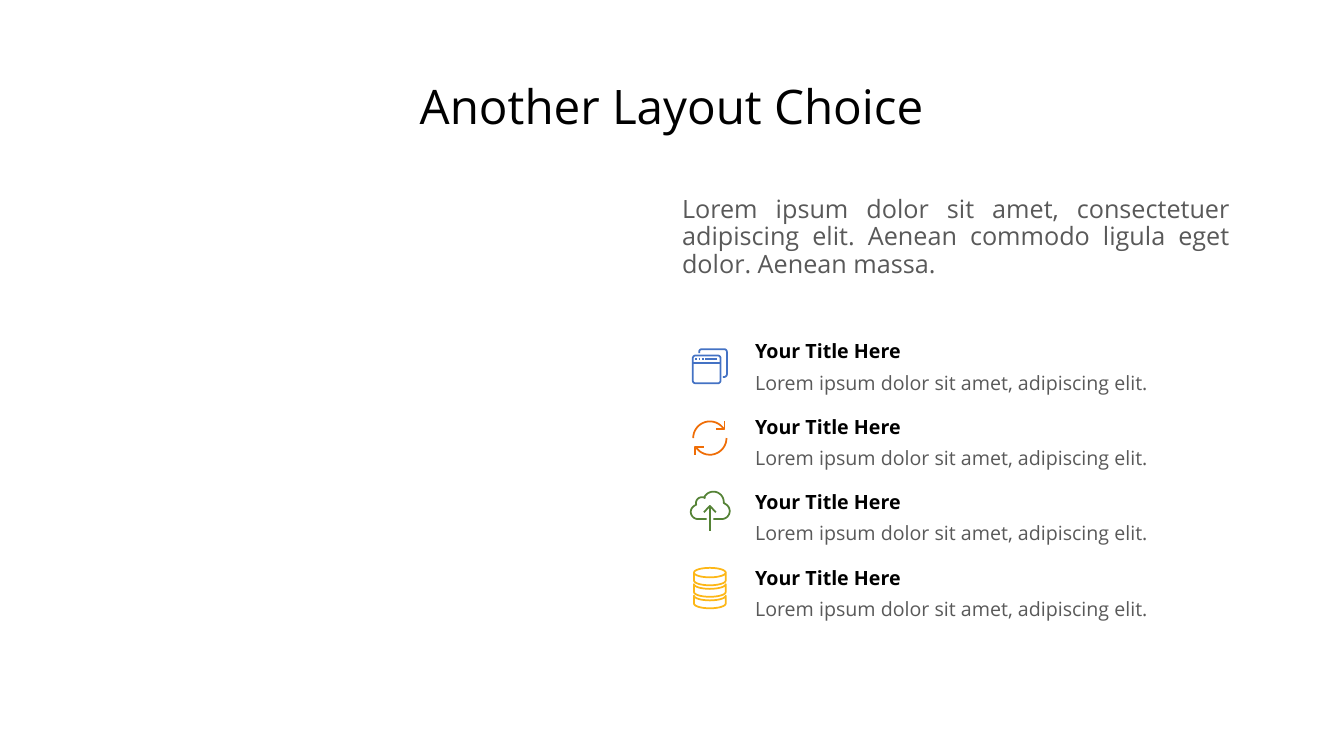
from math import cos, radians, sin

from pptx import Presentation
from pptx.dml.color import RGBColor
from pptx.enum.text import MSO_ANCHOR as Anchor, PP_ALIGN as Align
from pptx.util import Cm, Pt

BLACK = RGBColor(0x00, 0x00, 0x00)
GRAY = RGBColor(0x59, 0x59, 0x59)
BLUE = RGBColor(0x44, 0x72, 0xC4)
ORANGE = RGBColor(0xEF, 0x6D, 0x06)
GREEN = RGBColor(0x54, 0x82, 0x35)
YELLOW = RGBColor(0xFD, 0xB7, 0x17)


def write(frame, text, size=14, color=GRAY, bold=False, font="Open Sans",
          align=Align.LEFT, line_spacing=None, space_before=None):
    paragraph = frame.paragraphs[0]
    paragraph.alignment = align
    if line_spacing:
        paragraph.line_spacing = line_spacing
    if space_before:
        paragraph.space_before = Pt(space_before)
    run = paragraph.add_run()
    run.text = text
    run.font.name = font
    run.font.size = Pt(size)
    run.font.bold = bold
    run.font.color.rgb = color


def arc(cx, cy, rx, ry, start, end, steps=16):
    angles = [radians(start + (end - start) * i / steps) for i in range(steps + 1)]
    return [(cx + rx * cos(a), cy + ry * sin(a)) for a in angles]


def circle_arc(cx, cy, radius, start, end):
    return arc(cx, cy, radius, radius, start, end)


def window_icon():
    left, top, right, bottom, r = -0.43, -0.27, 0.27, 0.43, 0.07
    front = (circle_arc(left + r, top + r, r, 180, 270)
             + circle_arc(right - r, top + r, r, 270, 360)
             + circle_arc(right - r, bottom - r, r, 0, 90)
             + circle_arc(left + r, bottom - r, r, 90, 180)
             + [(left, top + r)])
    back = ([(-0.27, -0.33)] + circle_arc(-0.2, -0.36, r, 180, 270)
            + circle_arc(0.36, -0.36, r, 270, 360)
            + circle_arc(0.36, 0.2, r, 0, 90) + [(0.33, 0.27)])
    header = [(left, -0.09), (right, -0.09)]
    dots = [[(x, -0.18), (x + 0.04, -0.18)] for x in (-0.37, -0.28, -0.2)]
    address = [(-0.11, -0.18), (0.19, -0.18)]
    return [front, back, header, *dots, address]


def refresh_icon():
    upper = [circle_arc(0, 0, 0.42, 180, 328),
             [(0.16, -0.23), (0.37, -0.23), (0.37, -0.43)]]
    lower = [[(-x, -y) for x, y in stroke] for stroke in upper]
    return upper + lower


def cloud_icon():
    cloud = ([(-0.08, 0.2)] + circle_arc(-0.3, 0.02, 0.18, 90, 250)
             + circle_arc(-0.2, -0.2, 0.15, 165, 300)
             + circle_arc(0.09, -0.23, 0.26, 212, 365)
             + circle_arc(0.3, 0, 0.2, 300, 450) + [(0.09, 0.2)])
    return [cloud, [(0, 0.5), (0, -0.13)],
            [(-0.15, 0.03), (0, -0.13), (0.15, 0.03)]]


def coins_icon():
    rx, ry, thickness = 0.4, 0.12, 0.2
    tops = [-0.38 + 0.29 * i for i in range(3)]
    coins = [arc(0, top, rx, ry, 180, 0) + arc(0, top + thickness, rx, ry, 0, 180)
             + [(-rx, top)] for top in tops]
    return [arc(0, tops[0], rx, ry, 180, 360), *coins]


class LayoutSlide:
    line_width = Pt(1.25)

    def __init__(self, slide):
        self.slide = slide

    def text(self, text, left, top, width, height, anchor=Anchor.MIDDLE,
             inset=(0.25, 0.13), **style):
        box = self.slide.shapes.add_textbox(Cm(left), Cm(top), Cm(width), Cm(height))
        frame = box.text_frame
        frame.word_wrap = True
        frame.vertical_anchor = anchor
        frame.margin_left = frame.margin_right = Cm(inset[0])
        frame.margin_top = frame.margin_bottom = Cm(inset[1])
        write(frame, text, **style)

    def icon(self, strokes, center_x, center_y, color):
        paths = [[(Cm(center_x + x), Cm(center_y + y)) for x, y in stroke]
                 for stroke in strokes]
        builder = self.slide.shapes.build_freeform(*paths[0][0])
        for path in paths:
            builder.move_to(*path[0])
            builder.add_line_segments(path[1:], close=False)
        drawing = builder.convert_to_shape()
        drawing.shadow.inherit = False
        drawing.fill.background()
        drawing.line.color.rgb = color
        drawing.line.width = self.line_width

    def feature(self, top, strokes, icon_y, color):
        inset = (0.51, 0.25)
        self.text("Your Title Here", 18.52, top, 11.05, 0.97, inset=inset,
                  color=BLACK, bold=True)
        self.text("Lorem ipsum dolor sit amet, adipiscing elit.",
                  18.52, top + 1.01, 11.05, 0.53, inset=inset)
        self.icon(strokes, 17.89, icon_y, color)


def main():
    deck = Presentation()
    deck.slide_width, deck.slide_height = Cm(33.87), Cm(19.05)
    page = LayoutSlide(deck.slides.add_slide(deck.slide_layouts[6]))

    features = [
        (window_icon(), 9.23, BLUE),
        (refresh_icon(), 11.04, ORANGE),
        (cloud_icon(), 12.88, GREEN),
        (coins_icon(), 14.81, YELLOW),
    ]
    for row, (strokes, icon_y, color) in enumerate(features):
        page.feature(8.36 + 1.9 * row, strokes, icon_y, color)

    page.text("Lorem ipsum dolor sit amet, consectetuer adipiscing elit. "
              "Aenean commodo ligula eget dolor. Aenean massa.",
              16.94, 4.83, 14.3, 2.64, anchor=Anchor.TOP, size=18,
              align=Align.JUSTIFY, line_spacing=0.9, space_before=7.5)
    page.text("Another Layout Choice", 9.47, 1.8, 14.91, 1.7, size=34,
              color=BLACK, align=Align.CENTER)
    deck.save("out.pptx")


if __name__ == "__main__":
    main()
